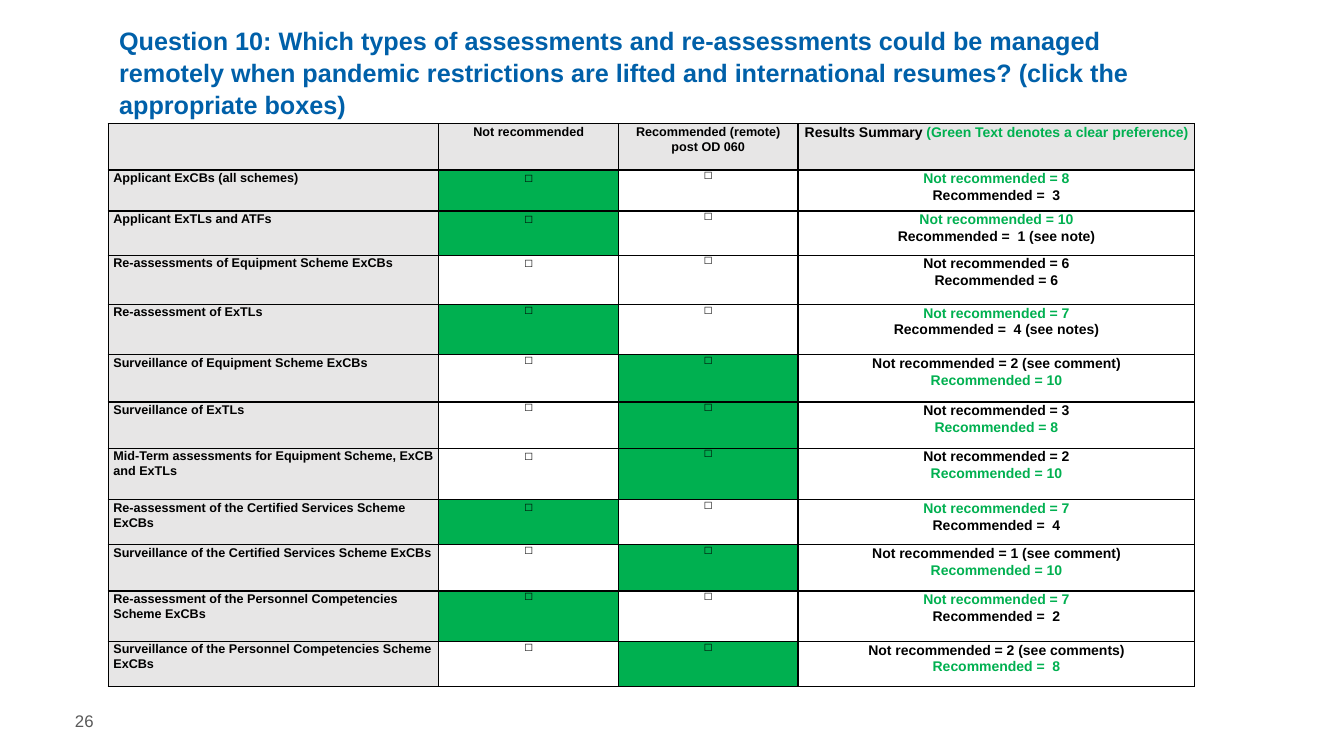
import pptx
import pptx.util
import pptx.dml.color
import pptx.enum.text
import pptx.oxml
import pptx.oxml.ns
import lxml.etree

PX = 9525  # 96 px to the inch
COLORS = {
    "title": "0060A9",
    "page": "595959",
    "text": "000000",
    "green": "00B050",
    "label": "E7E6E6",
    "white": "FFFFFF",
}
ALIGN = pptx.enum.text.PP_ALIGN
COLUMN_WIDTHS = [315, 171, 171, 378]
ROW_HEIGHTS = [44, 39, 42, 47, 48, 45, 44, 49, 43, 44, 48, 43]
LINE_SPACING = 1.07
WIDE_BOX, BOX = "Noto Sans CJK JP", "Karla"

# Label, preferred choice (0 not recommended, 1 recommended, None neither),
# font of the first check box, the two summary lines
ASSESSMENTS = [
    ("Applicant ExCBs (all schemes)", 0, WIDE_BOX,
     "Not recommended = 8", "Recommended =  3"),
    ("Applicant ExTLs and ATFs", 0, WIDE_BOX,
     "Not recommended = 10", "Recommended =  1 (see note)"),
    ("Re-assessments of Equipment Scheme ExCBs", None, WIDE_BOX,
     "Not recommended = 6", "Recommended = 6"),
    ("Re-assessment of ExTLs", 0, BOX,
     "Not recommended = 7", "Recommended =  4 (see notes)"),
    ("Surveillance of Equipment Scheme ExCBs", 1, BOX,
     "Not recommended = 2 (see comment)", "Recommended = 10"),
    ("Surveillance of ExTLs", 1, BOX,
     "Not recommended = 3", "Recommended = 8"),
    ("Mid-Term assessments for Equipment Scheme, ExCB and ExTLs", 1, WIDE_BOX,
     "Not recommended = 2", "Recommended = 10"),
    ("Re-assessment of the Certified Services Scheme ExCBs", 0, WIDE_BOX,
     "Not recommended = 7", "Recommended =  4"),
    ("Surveillance of the Certified Services Scheme ExCBs", 1, BOX,
     "Not recommended = 1 (see comment)", "Recommended = 10"),
    ("Re-assessment of the Personnel Competencies Scheme ExCBs", 0, BOX,
     "Not recommended = 7", "Recommended =  2"),
    ("Surveillance of the Personnel Competencies Scheme ExCBs", 1, BOX,
     "Not recommended = 2 (see comments)", "Recommended =  8"),
]


def rgb(name):
    return pptx.dml.color.RGBColor.from_string(COLORS[name])


def add_run(paragraph, text, size, color="text", bold=True, font="Arial"):
    run = paragraph.add_run()
    run.text = text
    run.font.size = pptx.util.Pt(size)
    run.font.bold = bold
    run.font.color.rgb = rgb(color)
    run.font.name = font
    east_asian = pptx.oxml.parse_xml(
        f'<a:ea {pptx.oxml.ns.nsdecls("a")} typeface="{font}"/>')
    run.font._element.append(east_asian)


def add_text(slide, left, top, width, height, text, size, color, bold, spacing):
    box = slide.shapes.add_textbox(left * PX, top * PX, width * PX, height * PX)
    frame = box.text_frame
    frame.word_wrap = True
    frame.vertical_anchor = pptx.enum.text.MSO_ANCHOR.MIDDLE
    paragraph = frame.paragraphs[0]
    paragraph.line_spacing = spacing
    add_run(paragraph, text, size, color, bold)


def set_borders(cell):
    properties = cell._tc.get_or_add_tcPr()
    for index, side in enumerate(("lnL", "lnR", "lnT", "lnB")):
        line = pptx.oxml.parse_xml(
            f'<a:{side} {pptx.oxml.ns.nsdecls("a")} w="12700"><a:solidFill>'
            f'<a:srgbClr val="{COLORS["text"]}"/></a:solidFill></a:{side}>')
        properties.insert(index, line)


def fill_cell(cell, fill, lines, align=ALIGN.CENTER):
    """Each line is a list of argument tuples for add_run."""
    cell.margin_left = cell.margin_right = 5 * PX
    cell.margin_top = cell.margin_bottom = 0
    cell.fill.solid()
    cell.fill.fore_color.rgb = rgb(fill)
    set_borders(cell)
    for index, runs in enumerate(lines):
        frame = cell.text_frame
        paragraph = frame.add_paragraph() if index else frame.paragraphs[0]
        paragraph.alignment = align
        paragraph.line_spacing = LINE_SPACING
        for run in runs:
            add_run(paragraph, *run)


def add_results_table(slide):
    frame = slide.shapes.add_table(
        len(ROW_HEIGHTS), len(COLUMN_WIDTHS), 103 * PX, 118 * PX,
        sum(COLUMN_WIDTHS) * PX, sum(ROW_HEIGHTS) * PX)
    table = frame.table
    for column, width in zip(table.columns, COLUMN_WIDTHS):
        column.width = width * PX
    for row, height in zip(table.rows, ROW_HEIGHTS):
        row.height = height * PX

    # Header row
    headers = [
        [],
        [[("Not recommended", 9)]],
        [[("Recommended (remote) post OD 060", 9)]],
        [[("Results Summary ", 10),
          ("(Green Text denotes a clear preference)", 10, "green")]],
    ]
    for column, lines in enumerate(headers):
        fill_cell(table.cell(0, column), "label", lines)

    # One row for each type of assessment
    for row, (label, preferred, box_font, *summary) in enumerate(ASSESSMENTS, 1):
        fill_cell(table.cell(row, 0), "label", [[(label, 9)]], ALIGN.LEFT)
        for choice, font in enumerate((box_font, BOX)):
            fill = "green" if choice == preferred else "white"
            fill_cell(table.cell(row, choice + 1), fill,
                      [[("☐", 7, "text", False, font)]])
        lines = [[(text, 10, "green" if choice == preferred else "text")]
                 for choice, text in enumerate(summary)]
        fill_cell(table.cell(row, 3), "white", lines)


def main():
    presentation = pptx.Presentation()
    presentation.slide_width = 1280 * PX
    presentation.slide_height = 720 * PX
    slide = presentation.slides.add_slide(presentation.slide_layouts[6])

    # Question
    add_text(slide, 104, 19, 1036, 98,
             "Question 10: Which types of assessments and re-assessments could be "
             "managed remotely when pandemic restrictions are lifted and "
             "international resumes? (click the appropriate boxes)",
             18, "title", True, 1.05)
    # Answers
    add_results_table(slide)
    # Page number
    add_text(slide, 62, 667, 110, 38, "26", 12, "page", False, 1.0)

    presentation.save("out.pptx")


if __name__ == "__main__":
    main()
